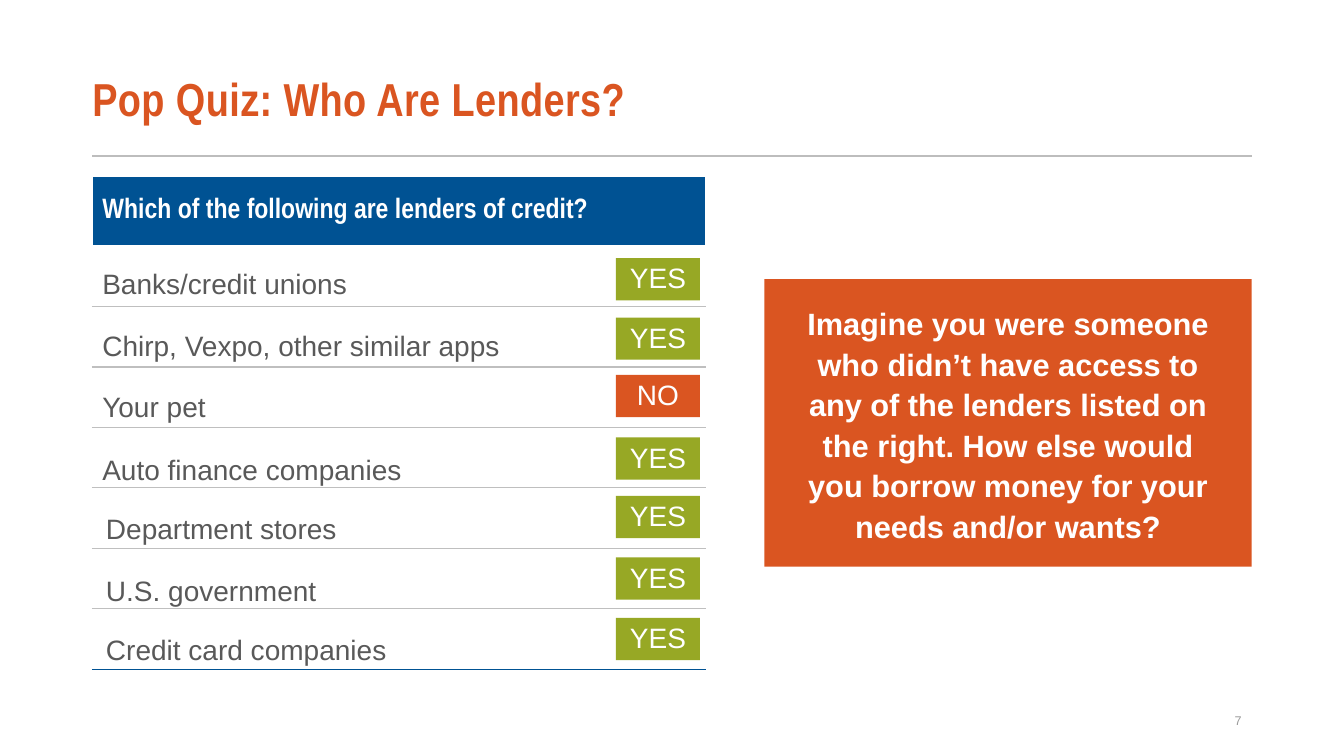
from lxml.etree import SubElement
from pptx import Presentation
from pptx.dml.color import RGBColor as Rgb
from pptx.enum.shapes import MSO_CONNECTOR as Conn, MSO_SHAPE as Shape
from pptx.enum.text import MSO_ANCHOR as Anchor, PP_ALIGN as Align
from pptx.oxml.ns import qn
from pptx.util import Pt

COLORS = {"orange": "DA5521", "blue": "005293", "green": "97A825", "text": "595959",
          "white": "FFFFFF", "rule": "BDBDBD", "grid": "BFBFBF", "page": "9A9A9A"}


class Deck:
    def __init__(self):
        self.prs = Presentation()
        self.prs.slide_width, self.prs.slide_height = Pt(960), Pt(540)
        self.slide = self.prs.slides.add_slide(self.prs.slide_layouts[6])
        self.shapes = self.slide.shapes

    def color(self, name):
        return Rgb.from_string(COLORS[name])

    def style(self, frame, text, size, color, font="Arial", bold=False,
              align=Align.LEFT, space=None, track=0):
        frame.text = text
        para = frame.paragraphs[0]
        para.alignment = align
        if space:
            para.line_spacing = space
        run = para.runs[0]
        run.font.name, run.font.size, run.font.bold = font, Pt(size), bold
        run.font.color.rgb = self.color(color)
        if track:
            run.font._element.set("spc", str(track))

    def fit(self, frame, anchor, left, right):
        frame.word_wrap = True
        frame.vertical_anchor = anchor
        frame.margin_left, frame.margin_right = Pt(left), Pt(right)

    def label(self, box, text, size, color, anchor=Anchor.TOP, left=7.2, **look):
        item = self.shapes.add_textbox(*map(Pt, box))
        self.fit(item.text_frame, anchor, left, 7.2)
        self.style(item.text_frame, text, size, color, **look)

    def block(self, box, text, size, fill, anchor=Anchor.TOP, side=7.2, **look):
        item = self.shapes.add_shape(Shape.RECTANGLE, *map(Pt, box))
        item.shadow.inherit = False
        item.fill.solid()
        item.fill.fore_color.rgb = self.color(fill)
        item.line.fill.background()
        self.fit(item.text_frame, anchor, side, side)
        self.style(item.text_frame, text, size, "white", align=Align.CENTER, **look)

    def rule(self, left, right, top, color, width):
        line = self.shapes.add_connector(Conn.STRAIGHT, Pt(left), Pt(top), Pt(right), Pt(top))
        line.line.color.rgb = self.color(color)
        line.line.width = Pt(width)
        SubElement(line._element.spPr, qn("a:effectLst"))

    def edge(self, cell, side, color, width):
        props = cell._tc.get_or_add_tcPr()
        line = SubElement(props, qn("a:" + side), w=str(Pt(width)))
        fill = SubElement(line, qn("a:solidFill"))
        SubElement(fill, qn("a:srgbClr"), val=COLORS[color])

    def table(self, left, top, cols, rows, head):
        frame = self.shapes.add_table(len(rows), len(cols), Pt(left), Pt(top),
                                      Pt(sum(cols)), Pt(sum(rows)))
        grid = frame.table
        grid.first_row = grid.horz_banding = False
        for col, width in zip(grid.columns, cols):
            col.width = Pt(width)
        last = len(rows) - 1
        for r, high in enumerate(rows):
            grid.rows[r].height = Pt(high)
            for cell in grid.rows[r].cells:
                # Borders come before the fill in the cell properties
                if r == 0:
                    self.edge(cell, "lnT", "blue", 0.5)
                    cell.fill.solid()
                    cell.fill.fore_color.rgb = self.color("blue")
                    continue
                if r > 1:
                    self.edge(cell, "lnT", "grid", 1)
                if r == last:
                    self.edge(cell, "lnB", "blue", 0.5)
                else:
                    self.edge(cell, "lnB", "grid", 1)
                cell.fill.background()
        first = grid.cell(0, 0)
        first.merge(grid.cell(0, len(cols) - 1))
        first.vertical_anchor = Anchor.MIDDLE
        self.style(first.text_frame, head, 20, "white", font="Arial Narrow", bold=True)


def main():
    deck = Deck()

    # Title, rule and page number
    deck.rule(66, 894, 111.2, "rule", 1.5)
    deck.label((66, 39, 828, 68.4), "Pop Quiz: Who Are Lenders?", 33, "orange",
               anchor=Anchor.MIDDLE, left=0, font="Arial Narrow", bold=True,
               space=0.87, track=30)
    deck.label((678, 500.4, 216, 28.8), "7", 9, "page", anchor=Anchor.MIDDLE,
               align=Align.RIGHT)

    # Quiz table
    deck.table(66, 126.7, [330, 108], [49] + [43.2] * 7,
               "Which of the following are lenders of credit?")

    # Lenders: text, left, top, answer, top of answer
    quiz = [
        ("Banks/credit unions", 66, 188.6, "YES", 184.3),
        ("Chirp, Vexpo, other similar apps", 66, 232.6, "YES", 226.8),
        ("Your pet", 66, 276.5, "NO", 267.8),
        ("Auto finance companies", 66, 321.1, "YES", 312.5),
        ("Department stores", 68.6, 363.6, "YES", 354.2),
        ("U.S. government", 68.6, 407.5, "YES", 398.2),
        ("Credit card companies", 68.6, 450, "YES", 441.4),
    ]
    for text, left, top, reply, high in quiz:
        deck.label((left, top, 359.3, 30.2), text, 20, "text", space=0.95)
        deck.block((440, high, 60, 30.2), reply, 20,
                   "green" if reply == "YES" else "orange", space=0.95)

    # Question box
    deck.block((546, 199.4, 348, 205.4),
               "Imagine you were someone who didn’t have access to any of the lenders "
               "listed on the right. How else would you borrow money for your needs "
               "and/or wants?",
               22, "orange", anchor=Anchor.MIDDLE, side=21.6, bold=True, space=Pt(29))

    deck.prs.save("out.pptx")


if __name__ == "__main__":
    main()
